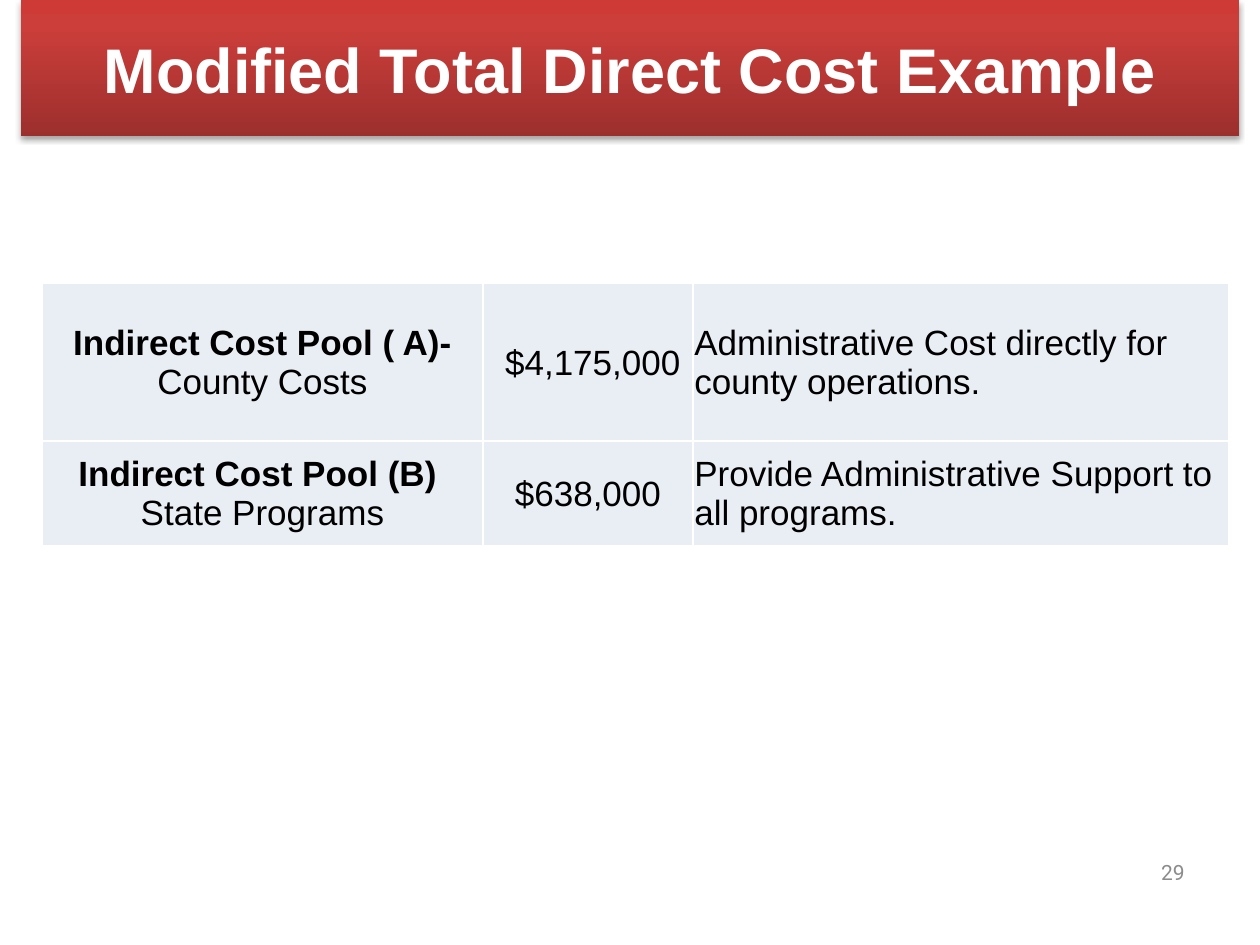
from dataclasses import dataclass

import lxml.etree
import pptx
import pptx.dml.color
import pptx.enum.text
import pptx.oxml
import pptx.oxml.ns
import pptx.util

Pt = pptx.util.Pt
ALIGN = pptx.enum.text.PP_ALIGN
MIDDLE = pptx.enum.text.MSO_ANCHOR.MIDDLE
NAMESPACE = pptx.oxml.ns.nsdecls("a")


@dataclass
class Line:
    """One paragraph: an optional bold lead followed by plain text."""
    bold: str = ""
    plain: str = ""
    align: ALIGN = ALIGN.CENTER


COLUMN_WIDTHS = (252, 120, 306)
ROW_HEIGHTS = (90, 60)
COST_POOLS = (
    (
        [Line("Indirect Cost Pool ( A)-", "County Costs")],
        [Line(plain=" $4,175,000")],
        [Line(plain="Administrative Cost directly for county operations.", align=ALIGN.LEFT)],
    ),
    (
        [Line("Indirect Cost Pool (B) "), Line(plain="State Programs")],
        [Line(plain="$638,000")],
        [Line(plain="Provide Administrative Support to all programs.", align=ALIGN.LEFT)],
    ),
)


def color(value: str) -> pptx.dml.color.RGBColor:
    return pptx.dml.color.RGBColor.from_string(value)


def set_font(paragraph, name: str, size: float, value: str) -> None:
    paragraph.font.name = name
    paragraph.font.size = Pt(size)
    paragraph.font.color.rgb = color(value)


def place(shape, left: float, top: float, width: float, height: float) -> None:
    shape.left, shape.top = Pt(left), Pt(top)
    shape.width, shape.height = Pt(width), Pt(height)


def add_banner_style(shape) -> None:
    """Give the title its red gradient and soft shadow."""
    stops = ((0, "9C2F2D"), (80, "CB3E3A"), (100, "CE3B37"))
    stop_xml = "".join(
        f'<a:gs pos="{position * 1000}"><a:srgbClr val="{value}"/></a:gs>'
        for position, value in stops
    )
    parts = (
        f'<a:prstGeom {NAMESPACE} prst="rect"><a:avLst/></a:prstGeom>',
        f'<a:gradFill {NAMESPACE} rotWithShape="1"><a:gsLst>{stop_xml}</a:gsLst>'
        '<a:lin ang="16200000" scaled="0"/></a:gradFill>',
        f'<a:ln {NAMESPACE}><a:noFill/></a:ln>',
        f'<a:effectLst {NAMESPACE}><a:outerShdw blurRad="{Pt(3.1)}" dist="{Pt(1.8)}" '
        'dir="5400000" rotWithShape="0"><a:srgbClr val="000000"><a:alpha val="35000"/>'
        '</a:srgbClr></a:outerShdw></a:effectLst>',
    )
    for part in parts:
        shape._element.spPr.append(pptx.oxml.parse_xml(part))


def add_borders(cell, value: str, width: float) -> None:
    properties = cell._tc.get_or_add_tcPr()
    for side in ("lnL", "lnR", "lnT", "lnB"):
        properties.append(pptx.oxml.parse_xml(
            f'<a:{side} {NAMESPACE} w="{Pt(width)}"><a:solidFill>'
            f'<a:srgbClr val="{value}"/></a:solidFill></a:{side}>'
        ))


def fill_cell(cell, lines: list[Line]) -> None:
    add_borders(cell, "FFFFFF", 1)
    cell.fill.solid()
    cell.fill.fore_color.rgb = color("E9EDF4")
    cell.vertical_anchor = MIDDLE
    cell.margin_left = cell.margin_right = cell.margin_top = Pt(0.75)
    cell.margin_bottom = Pt(0)
    frame = cell.text_frame
    for index, line in enumerate(lines):
        paragraph = frame.add_paragraph() if index else frame.paragraphs[0]
        paragraph.alignment = line.align
        set_font(paragraph, "Arial", 20, "000000")
        for text, bold in ((line.bold, True), (line.plain, False)):
            if text:
                run = paragraph.add_run()
                run.text = text
                run.font.bold = bold
                run.font.name = "Arial"
                run.font.size = Pt(20)
                run.font.color.rgb = color("000000")


def main() -> None:
    presentation = pptx.Presentation()
    presentation.slide_width, presentation.slide_height = Pt(720), Pt(540)
    slide = presentation.slides.add_slide(presentation.slide_layouts[5])

    # Title banner
    title = slide.shapes.title
    place(title, 12, 0, 696, 78)
    add_banner_style(title)
    title.text_frame.text = "Modified Total Direct Cost Example"
    title.text_frame.vertical_anchor = MIDDLE
    title.text_frame.auto_size = pptx.enum.text.MSO_AUTO_SIZE.NONE
    heading = title.text_frame.paragraphs[0]
    heading.alignment = ALIGN.CENTER
    set_font(heading, "Arial", 36, "FFFFFF")
    heading.font.bold = True

    # Cost pool table
    table = slide.shapes.add_table(
        len(ROW_HEIGHTS), len(COLUMN_WIDTHS), Pt(24), Pt(162),
        Pt(sum(COLUMN_WIDTHS)), Pt(sum(ROW_HEIGHTS)),
    ).table
    table.first_row = table.horz_banding = False
    for column, width in zip(table.columns, COLUMN_WIDTHS):
        column.width = Pt(width)
    for row, height, pool in zip(table.rows, ROW_HEIGHTS, COST_POOLS):
        row.height = Pt(height)
        for cell, lines in zip(row.cells, pool):
            fill_cell(cell, lines)

    # Page number
    number = slide.shapes.add_textbox(Pt(516), Pt(468), Pt(168), Pt(61))
    number.text_frame.word_wrap = True
    number.text_frame.vertical_anchor = MIDDLE
    number.text_frame.text = "29"
    paragraph = number.text_frame.paragraphs[0]
    paragraph.alignment = ALIGN.RIGHT
    set_font(paragraph, "Roboto", 12, "8C8C8C")

    presentation.save("out.pptx")


if __name__ == "__main__":
    main()
